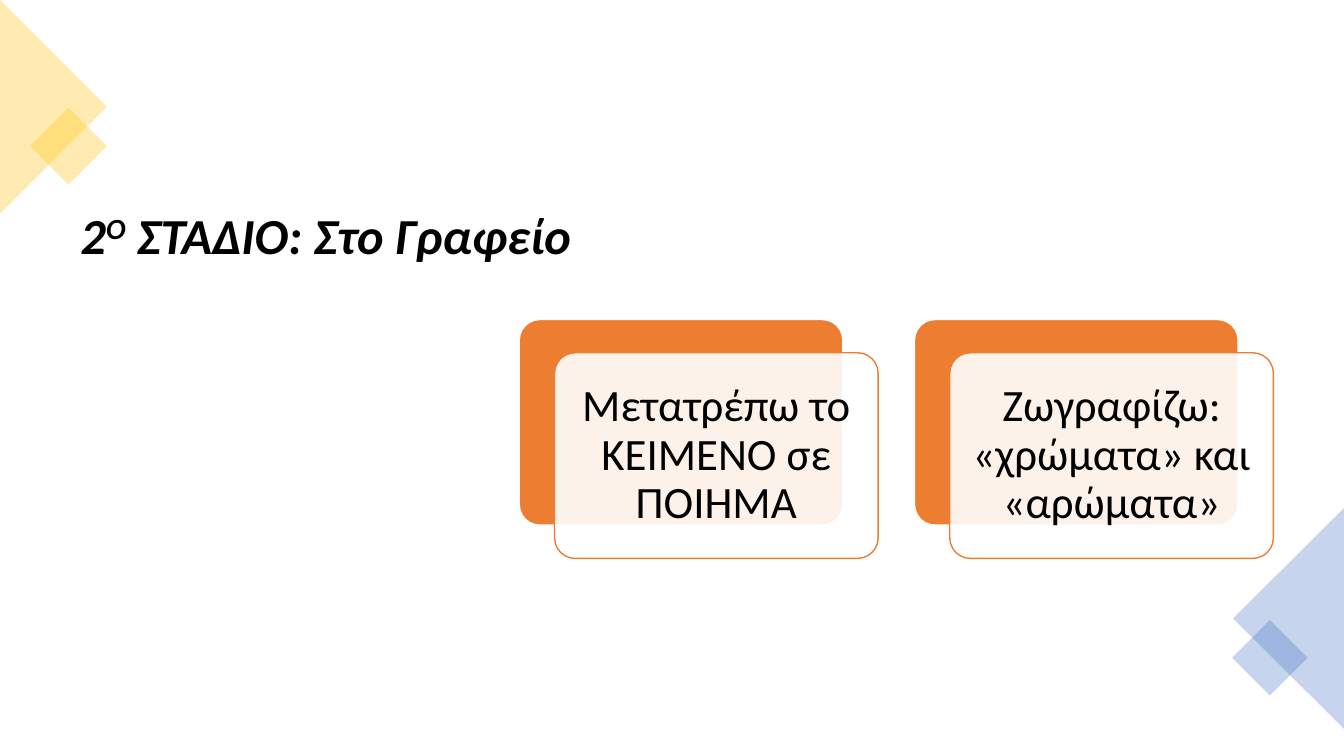
from dataclasses import dataclass

from lxml import etree
from pptx import Presentation
from pptx import util as u
from pptx.dml.color import RGBColor
from pptx.enum import shapes, text
from pptx.oxml.ns import qn

PX = 9144  # EMU per px, 100 px to the inch

BLACK = RGBColor(0x00, 0x00, 0x00)
WHITE = RGBColor(0xFF, 0xFF, 0xFF)
GOLD = RGBColor(0xFF, 0xC0, 0x00)
BLUE = RGBColor(0x44, 0x72, 0xC4)
ORANGE = RGBColor(0xED, 0x7D, 0x31)

SHAPE = shapes.MSO_SHAPE


@dataclass(frozen=True)
class Box:
    x: int
    y: int
    w: int
    h: int

    def emu(self) -> list[int]:
        return [n * PX for n in (self.x, self.y, self.w, self.h)]

    def moved(self, dx: int, dy: int) -> "Box":
        return Box(self.x + dx, self.y + dy, self.w, self.h)


@dataclass(frozen=True)
class Corner:
    kind: SHAPE
    box: Box
    rotation: int
    color: RGBColor


CORNERS = [
    Corner(SHAPE.RECTANGLE, Box(41, 118, 54, 54), 45, GOLD),
    Corner(SHAPE.ISOSCELES_TRIANGLE, Box(-53, 53, 212, 106), 90, GOLD),
    Corner(SHAPE.ISOSCELES_TRIANGLE, Box(1168, 558, 221, 111), 270, BLUE),
    Corner(SHAPE.RECTANGLE, Box(1233, 626, 53, 53), 45, BLUE),
]

TITLE_BOX = Box(70, 174, 1193, 124)
TITLE_RUNS = [("2", 0), ("Ο", 30), (" ΣΤΆΔΙΟ: Στο Γραφείο", 0)]  # text, raise in %

CARDS = ["Μετατρέπω το ΚΕΙΜΕΝΟ σε ΠΟΙΗΜΑ", "Ζωγραφίζω: «χρώματα» και «αρώματα»"]
CARD_BOX = Box(515, 317, 321, 204)
CARD_PITCH = 392
FRONT_SHIFT = (35, 33)
CARD_INSET = 13


def set_all(target, values: dict) -> None:
    for name, value in values.items():
        setattr(target, name, value)


def add_filled(s, kind: SHAPE, box: Box, color: RGBColor, opacity: int = 100):
    """Add a preset shape without outline; opacity is in percent."""
    sp = s.shapes.add_shape(kind, *box.emu())
    sp.shadow.inherit = False
    sp.fill.solid()
    sp.fill.fore_color.rgb = color
    sp.line.fill.background()
    if opacity < 100:
        clr = sp.fill._xPr.find(qn("a:solidFill"))[0]
        etree.SubElement(clr, qn("a:alpha")).set("val", str(opacity * 1000))
    return sp


def add_run(p, wording: str, size: int, **style):
    r = p.add_run()
    r.text = wording
    set_all(r.font, dict(name="Calibri", size=u.Pt(size), **style))
    r.font.color.rgb = BLACK
    return r


def add_title(s) -> None:
    tf = s.shapes.add_textbox(*TITLE_BOX.emu()).text_frame
    set_all(tf, dict(word_wrap=True, vertical_anchor=text.MSO_ANCHOR.MIDDLE))
    p = tf.paragraphs[0]
    p.line_spacing = 0.9
    for wording, rise in TITLE_RUNS:
        r = add_run(p, wording, 36, bold=True, italic=True)
        if rise:
            r.font._element.set("baseline", str(rise * 1000))


def add_card(s, box: Box, wording: str) -> None:
    layers = [(box, ORANGE, 100, WHITE), (box.moved(*FRONT_SHIFT), WHITE, 90, ORANGE)]
    for place, fill, opacity, outline in layers:
        sp = add_filled(s, SHAPE.ROUNDED_RECTANGLE, place, fill, opacity)
        sp.adjustments[0] = 0.1
        sp.line.color.rgb = outline
        sp.line.width = u.Pt(1)
    tf = sp.text_frame  # the front layer carries the wording
    set_all(tf, dict(word_wrap=True, vertical_anchor=text.MSO_ANCHOR.MIDDLE))
    set_all(tf, {f"margin_{side}": CARD_INSET * PX for side in ("left", "top", "right", "bottom")})
    p = tf.paragraphs[0]
    set_all(p, dict(alignment=text.PP_ALIGN.CENTER, line_spacing=0.9))
    add_run(p, wording, 32)


def main() -> None:
    prs = Presentation()
    set_all(prs, dict(slide_width=1333 * PX, slide_height=750 * PX))
    s = prs.slides.add_slide(prs.slide_layouts[6])
    for corner in CORNERS:
        sp = add_filled(s, corner.kind, corner.box, corner.color, 30)
        sp.rotation = corner.rotation
    add_title(s)
    for i, wording in enumerate(CARDS):
        add_card(s, CARD_BOX.moved(i * CARD_PITCH, 0), wording)
    prs.save("out.pptx")


if __name__ == "__main__":
    main()
